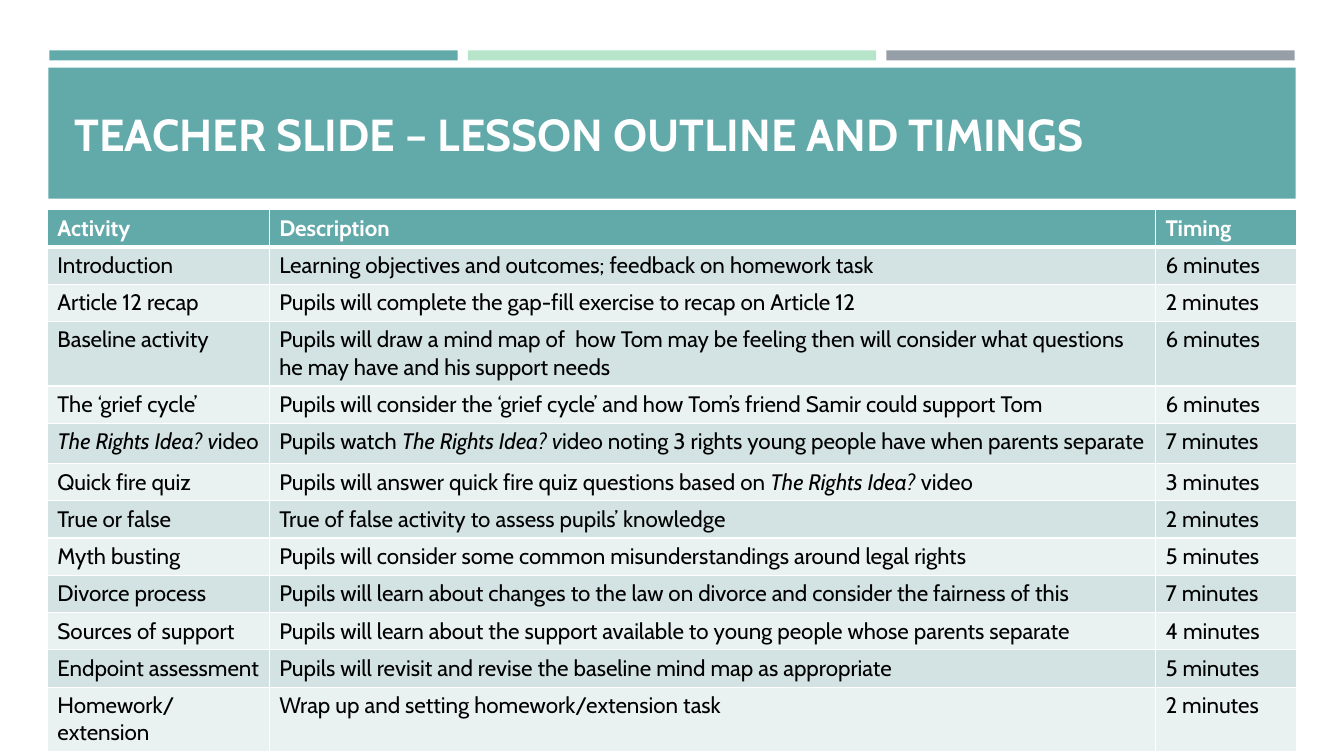
from dataclasses import dataclass
from typing import NamedTuple

from lxml.etree import SubElement
from pptx import Presentation
from pptx.dml.color import RGBColor as Rgb
from pptx.enum.shapes import MSO_SHAPE as Kind
from pptx.enum.text import MSO_ANCHOR as Anchor, MSO_AUTO_SIZE as Fit, PP_ALIGN as Align
from pptx.oxml.ns import qn
from pptx.slide import Slide
from pptx.table import _Cell as Cell
from pptx.text.text import _Run as Run
from pptx.util import Emu, Pt

SCALE = 9144


@dataclass(frozen=True)
class Theme:
    font: str = "Cabin"
    teal: str = "62A9AA"
    mint: str = "B7E5CB"
    grey: str = "969FA7"
    dark: str = "D3E2E2"
    pale: str = "EAF1F1"
    white: str = "FFFFFF"
    black: str = "000000"
    title: int = 32
    body: int = 16
    thin: int = 1
    thick: int = 3


class Bar(NamedTuple):
    left: int
    top: int
    width: int
    height: int
    fill: str


class Task(NamedTuple):
    name: str
    text: str
    time: str


THEME = Theme()
TITLE = "TEACHER SLIDE – LESSON OUTLINE AND TIMINGS"
BARS = [
    Bar(49 + 415 * spot, 50, 405, 10, fill)
    for spot, fill in enumerate((THEME.teal, THEME.mint, THEME.grey))
] + [Bar(48, 67, 1237, 130, THEME.teal)]

MARK = "*"
COLS = (220, 879, 140)
INSET = 9
ROW = 37
TALL = {3: 64, 5: 40}
TASKS = [
    Task("Activity", "Description", "Timing"),
    Task("Introduction", "Learning objectives and outcomes; feedback on homework task", "6 minutes"),
    Task("Article 12 recap", "Pupils will complete the gap-fill exercise to recap on Article 12", "2 minutes"),
    Task(
        "Baseline activity",
        "Pupils will draw a mind map of  how Tom may be feeling then will consider "
        "what questions he may have and his support needs",
        "6 minutes",
    ),
    Task(
        "The ‘grief cycle’",
        "Pupils will consider the ‘grief cycle’ and how Tom’s friend Samir could support Tom",
        "6 minutes",
    ),
    Task(
        "*The Rights Idea? v*ideo",
        "Pupils watch *The Rights Idea? v*ideo noting 3 rights young people have when parents separate",
        "7 minutes",
    ),
    Task(
        "Quick fire quiz",
        "Pupils will answer quick fire quiz questions based on *The Rights Idea? *video",
        "3 minutes",
    ),
    Task("True or false", "True of false activity to assess pupils’ knowledge", "2 minutes"),
    Task("Myth busting", "Pupils will consider some common misunderstandings around legal rights", "5 minutes"),
    Task(
        "Divorce process",
        "Pupils will learn about changes to the law on divorce and consider the fairness of this",
        "7 minutes",
    ),
    Task(
        "Sources of support",
        "Pupils will learn about the support available to young people whose parents separate",
        "4 minutes",
    ),
    Task("Endpoint assessment", "Pupils will revisit and revise the baseline mind map as appropriate", "5 minutes"),
    Task("Homework/extension", "Wrap up and setting homework/extension task", "2 minutes"),
]


def px(size: int) -> Emu:
    return Emu(size * SCALE)


def style(run: Run, size: int, tint: str, bold: bool) -> None:
    run.font.name = THEME.font
    run.font.size = Pt(size)
    run.font.bold = bold
    run.font.color.rgb = Rgb.from_string(tint)


def draw_bar(slide: Slide, bar: Bar) -> None:
    shape = slide.shapes.add_shape(Kind.RECTANGLE, *map(px, bar[:4]))
    shape.shadow.inherit = False
    shape.fill.solid()
    shape.fill.fore_color.rgb = Rgb.from_string(bar.fill)
    shape.line.fill.background()


def draw_title(slide: Slide) -> None:
    title = slide.shapes.title
    title.left, title.top, title.width, title.height = map(px, (64, 77, 1206, 111))
    frame = title.text_frame
    frame.text = TITLE
    frame.word_wrap = True
    frame.auto_size = Fit.NONE
    frame.vertical_anchor = Anchor.MIDDLE
    frame.paragraphs[0].alignment = Align.LEFT
    style(frame.paragraphs[0].runs[0], THEME.title, THEME.white, True)
    title.element.getparent().append(title.element)


def draw_edge(cell: Cell, side: str, width: int) -> None:
    props = cell._tc.get_or_add_tcPr()
    line = SubElement(props, qn(f"a:ln{side}"), w=str(Pt(width)))
    fill = SubElement(line, qn("a:solidFill"))
    SubElement(fill, qn("a:srgbClr"), val=THEME.white)


def fill_cell(cell: Cell, text: str, row: int) -> None:
    head = row == 0
    para = cell.text_frame.paragraphs[0]
    for spot, part in enumerate(text.split(MARK)):
        if part:
            run = para.add_run()
            run.text = part
            style(run, THEME.body, THEME.white if head else THEME.black, head)
            run.font.italic = spot % 2 == 1
    cell.margin_right = px(INSET)
    edges = {
        "L": THEME.thin,
        "R": THEME.thin,
        "T": THEME.thick if row == 1 else THEME.thin,
        "B": THEME.thick if head else THEME.thin,
    }
    for side, width in edges.items():
        draw_edge(cell, side, width)
    tint = THEME.teal if head else (THEME.pale, THEME.dark)[row % 2]
    cell.fill.solid()
    cell.fill.fore_color.rgb = Rgb.from_string(tint)


def draw_table(slide: Slide) -> None:
    highs = [TALL.get(row, ROW) for row in range(len(TASKS))]
    box = map(px, (47, 208, sum(COLS), sum(highs)))
    table = slide.shapes.add_table(len(TASKS), len(COLS), *box).table
    for col, width in zip(table.columns, COLS):
        col.width = px(width)
    for row, task in enumerate(TASKS):
        table.rows[row].height = px(highs[row])
        for col, text in enumerate(task):
            fill_cell(table.cell(row, col), text, row)


def main() -> None:
    deck = Presentation()
    deck.slide_width, deck.slide_height = px(1333), px(750)
    slide = deck.slides.add_slide(deck.slide_layouts.get_by_name("Title Only"))
    for bar in BARS:
        draw_bar(slide, bar)
    draw_title(slide)
    draw_table(slide)
    deck.save("out.pptx")


if __name__ == "__main__":
    main()
